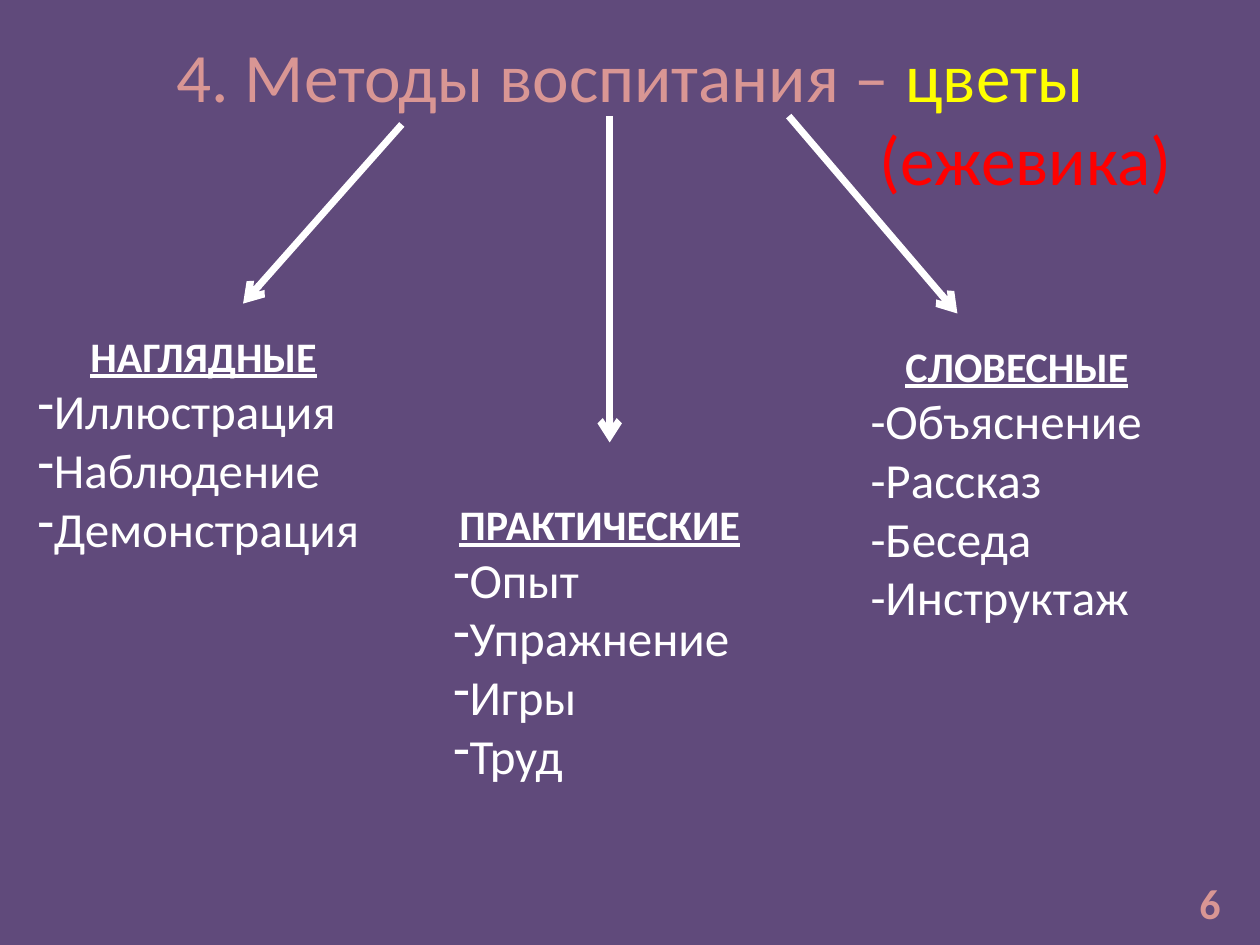
import pptx
import pptx.util
import pptx.dml.color
import pptx.enum.shapes
import pptx.enum.text
import pptx.oxml.ns
import lxml.etree

Cm = pptx.util.Cm
Pt = pptx.util.Pt
RGBColor = pptx.dml.color.RGBColor
Align = pptx.enum.text.PP_ALIGN
Anchor = pptx.enum.text.MSO_ANCHOR
qn = pptx.oxml.ns.qn

PURPLE = RGBColor(0x60, 0x4A, 0x7B)
ROSE = RGBColor(0xD9, 0x96, 0x94)
YELLOW = RGBColor(0xFF, 0xFF, 0x00)
RED = RGBColor(0xFF, 0x00, 0x00)
WHITE = RGBColor(0xFF, 0xFF, 0xFF)


class MethodsSlide:
    """Style and current slide, with one method per kind of element."""

    font_name = "Calibri"
    title_size = Pt(39.6)
    heading_size = Pt(24)
    item_size = Pt(28)
    arrow_width = Pt(4)

    def __init__(self, deck):
        self.page = deck.slides.add_slide(deck.slide_layouts[6])
        fill = self.page.background.fill
        fill.solid()
        fill.fore_color.rgb = PURPLE

    def box(self, left, top, width, height, anchor=Anchor.TOP):
        box = self.page.shapes.add_textbox(Cm(left), Cm(top), Cm(width), Cm(height))
        frame = box.text_frame
        frame.word_wrap = True
        frame.vertical_anchor = anchor
        return frame

    def fill_para(self, para, spans, size, align, bold=False, underline=False):
        """Fill a paragraph with (text, colour) spans."""
        para.alignment = align
        font = para.font
        font.name, font.size = self.font_name, size
        font.bold, font.underline = bold, underline
        for text, colour in spans:
            span = para.add_run()
            span.text = text
            span.font.color.rgb = colour

    def title(self, first_line, second_line):
        frame = self.box(1.27, 0.76, 22.86, 3.18, Anchor.MIDDLE)
        frame.margin_left = frame.margin_right = Cm(0.51)
        self.fill_para(frame.paragraphs[0], first_line, self.title_size, Align.CENTER)
        self.fill_para(frame.add_paragraph(), second_line, self.title_size, Align.RIGHT)

    def number(self, text):
        frame = self.box(23.39, 17.35, 2.01, 1.7, Anchor.MIDDLE)
        self.fill_para(frame.paragraphs[0], [(text, ROSE)], self.heading_size,
                       Align.CENTER, bold=True)

    def method_list(self, left, top, width, height, heading, items, bulleted):
        frame = self.box(left, top, width, height)
        self.fill_para(frame.paragraphs[0], [(heading, WHITE)], self.heading_size,
                       Align.CENTER, bold=True, underline=True)
        for item in items:
            para = frame.add_paragraph()
            if bulleted:
                self.dash_bullet(para)
            text = item if bulleted else "-" + item
            align = Align.JUSTIFY if bulleted else Align.LEFT
            self.fill_para(para, [(text, WHITE)], self.item_size, align)

    def dash_bullet(self, para):
        properties = para._p.get_or_add_pPr()
        lxml.etree.SubElement(properties, qn("a:buFontTx"))
        lxml.etree.SubElement(properties, qn("a:buChar")).set("char", "-")

    def arrow(self, start, end):
        arrow = self.page.shapes.add_connector(
            pptx.enum.shapes.MSO_CONNECTOR.STRAIGHT,
            *(Cm(length) for length in start + end))
        arrow.line.color.rgb = WHITE
        arrow.line.width = self.arrow_width
        line = arrow.line._get_or_add_ln()
        lxml.etree.SubElement(line, qn("a:tailEnd")).set("type", "arrow")
        lxml.etree.SubElement(arrow._element.spPr, qn("a:effectLst"))


def main():
    deck = pptx.Presentation()
    deck.slide_width, deck.slide_height = Cm(25.4), Cm(19.05)
    slide = MethodsSlide(deck)

    # Title and slide number
    slide.title([("4. Методы воспитания – ", ROSE), ("цветы", YELLOW)],
                [("(ежевика)", RED)])
    slide.number("6")

    # Three groups of methods
    slide.method_list(0.51, 6.53, 7.19, 4.88, "НАГЛЯДНЫЕ",
                      ["Иллюстрация", "Наблюдение", "Демонстрация"], bulleted=True)
    slide.method_list(8.89, 9.93, 6.4, 6.07, "ПРАКТИЧЕСКИЕ",
                      ["Опыт", "Упражнение", "Игры", "Труд"], bulleted=True)
    slide.method_list(17.3, 6.73, 6.4, 6.07, "СЛОВЕСНЫЕ",
                      ["Объяснение", "Рассказ", "Беседа", "Инструктаж"], bulleted=False)

    # Arrows from the title to each group
    for start, end in [((8.1, 2.51), (4.9, 6.12)),
                       ((15.9, 2.34), (19.3, 6.32)),
                       ((12.29, 2.34), (12.29, 8.92))]:
        slide.arrow(start, end)

    deck.save("out.pptx")


if __name__ == "__main__":
    main()
